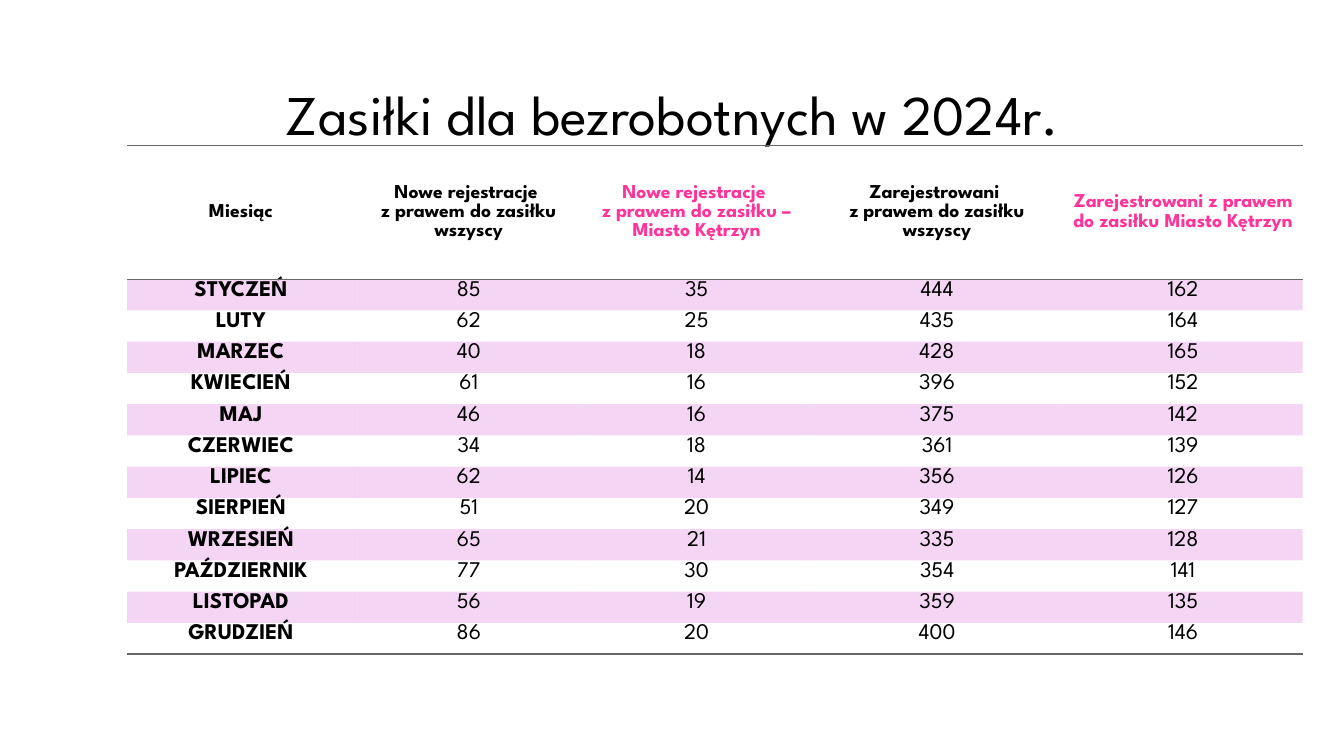
import pptx
import pptx.dml.color
import pptx.enum.text
import pptx.oxml
import pptx.oxml.ns
import pptx.util
from pptx.util import Inches

FONT = "League Spartan"
BLACK, PINK, VIOLET, RULE = "000000", "FF3399", "C830CC", "666666"
PLAIN_TABLE_STYLE = "{2D5ABB26-0587-4C30-8999-92F81FD0307C}"
COLUMN_WIDTHS = [2.26, 2.26, 2.26, 2.51, 2.37]
HEADER_HEIGHT, MONTH_HEIGHT = 1.33, 0.31
HEADINGS = [
    ("Miesiąc", BLACK),
    ("Nowe rejestracje \vz prawem do zasiłku wszyscy", BLACK),
    ("Nowe rejestracje \vz prawem do zasiłku – Miasto Kętrzyn", PINK),
    ("Zarejestrowani \vz prawem do zasiłku wszyscy", BLACK),
    ("Zarejestrowani z prawem do zasiłku Miasto Kętrzyn", PINK),
]
MONTHS = [
    ("STYCZEŃ", 85, 35, 444, 162),
    ("LUTY", 62, 25, 435, 164),
    ("MARZEC", 40, 18, 428, 165),
    ("KWIECIEŃ", 61, 16, 396, 152),
    ("MAJ", 46, 16, 375, 142),
    ("CZERWIEC", 34, 18, 361, 139),
    ("LIPIEC", 62, 14, 356, 126),
    ("SIERPIEŃ", 51, 20, 349, 127),
    ("WRZESIEŃ", 65, 21, 335, 128),
    ("PAŹDZIERNIK", 77, 30, 354, 141),
    ("LISTOPAD", 56, 19, 359, 135),
    ("GRUDZIEŃ", 86, 20, 400, 146),
]


def rgb(color):
    return pptx.dml.color.RGBColor.from_string(color)


def format_paragraph(paragraph, size, color=BLACK, bold=False):
    paragraph.alignment = pptx.enum.text.PP_ALIGN.CENTER
    paragraph.font.name = FONT
    paragraph.font.size = pptx.util.Pt(size)
    paragraph.font.bold = bold
    paragraph.font.color.rgb = rgb(color)


def write_cell(cell, text, size, color=BLACK, bold=False):
    cell.text = text
    cell.margin_left = cell.margin_right = Inches(0.07)
    cell.margin_top = cell.margin_bottom = 0
    paragraph = cell.text_frame.paragraphs[0]
    paragraph.line_spacing = 1.07
    paragraph.space_after = pptx.util.Pt(8)
    format_paragraph(paragraph, size, color, bold)


def rule_cell(cell, *edges):
    """Draw lines on the given edges (lnT, lnB); call before filling the cell."""
    for edge in edges:
        cell._tc.get_or_add_tcPr().append(pptx.oxml.parse_xml(
            f'<a:{edge} {pptx.oxml.ns.nsdecls("a")} w="12700"><a:solidFill>'
            f'<a:srgbClr val="{RULE}"/></a:solidFill></a:{edge}>'))


def tint_cell(cell):
    cell.fill.solid()
    cell.fill.fore_color.rgb = rgb(VIOLET)
    color = cell._tc.tcPr.find(".//" + pptx.oxml.ns.qn("a:srgbClr"))
    color.append(pptx.oxml.parse_xml(
        f'<a:alpha {pptx.oxml.ns.nsdecls("a")} val="20000"/>'))


def add_title(slide, left, top, width, height):
    title = slide.shapes.title
    title.left, title.top = Inches(left), Inches(top)
    title.width, title.height = Inches(width), Inches(height)
    title.text_frame.text = "Zasiłki dla bezrobotnych w 2024r."
    title.text_frame.vertical_anchor = pptx.enum.text.MSO_ANCHOR.MIDDLE
    format_paragraph(title.text_frame.paragraphs[0], 40)


def add_benefits_table(slide, left, top, width, height):
    benefits = slide.shapes.add_table(
        len(MONTHS) + 1, len(HEADINGS),
        Inches(left), Inches(top), Inches(width), Inches(height)).table
    benefits.horz_banding = False
    benefits._tbl.tblPr.find(pptx.oxml.ns.qn("a:tableStyleId")).text = PLAIN_TABLE_STYLE
    for column, column_width in zip(benefits.columns, COLUMN_WIDTHS):
        column.width = Inches(column_width)
    for row in benefits.rows:
        row.height = Inches(MONTH_HEIGHT)
    benefits.rows[0].height = Inches(HEADER_HEIGHT)

    for column, (heading, color) in enumerate(HEADINGS):
        cell = benefits.cell(0, column)
        write_cell(cell, heading, 14, color, bold=True)
        cell.vertical_anchor = pptx.enum.text.MSO_ANCHOR.MIDDLE
        rule_cell(cell, "lnT", "lnB")
        cell.fill.background()

    for row, month in enumerate(MONTHS, start=1):
        for column, value in enumerate(month):
            cell = benefits.cell(row, column)
            write_cell(cell, str(value), 16, bold=column == 0)
            if row == len(MONTHS):
                rule_cell(cell, "lnB")
            if row % 2:
                tint_cell(cell)
            else:
                cell.fill.background()


def main():
    presentation = pptx.Presentation()
    presentation.slide_width = Inches(13.33)
    presentation.slide_height = Inches(7.5)
    slide = presentation.slides.add_slide(presentation.slide_layouts[5])
    add_title(slide, 0.92, 0.4, 11.5, 1.45)
    add_benefits_table(slide, 1.26, 1.44, sum(COLUMN_WIDTHS),
                       HEADER_HEIGHT + MONTH_HEIGHT * len(MONTHS))
    presentation.save("out.pptx")


if __name__ == "__main__":
    main()
